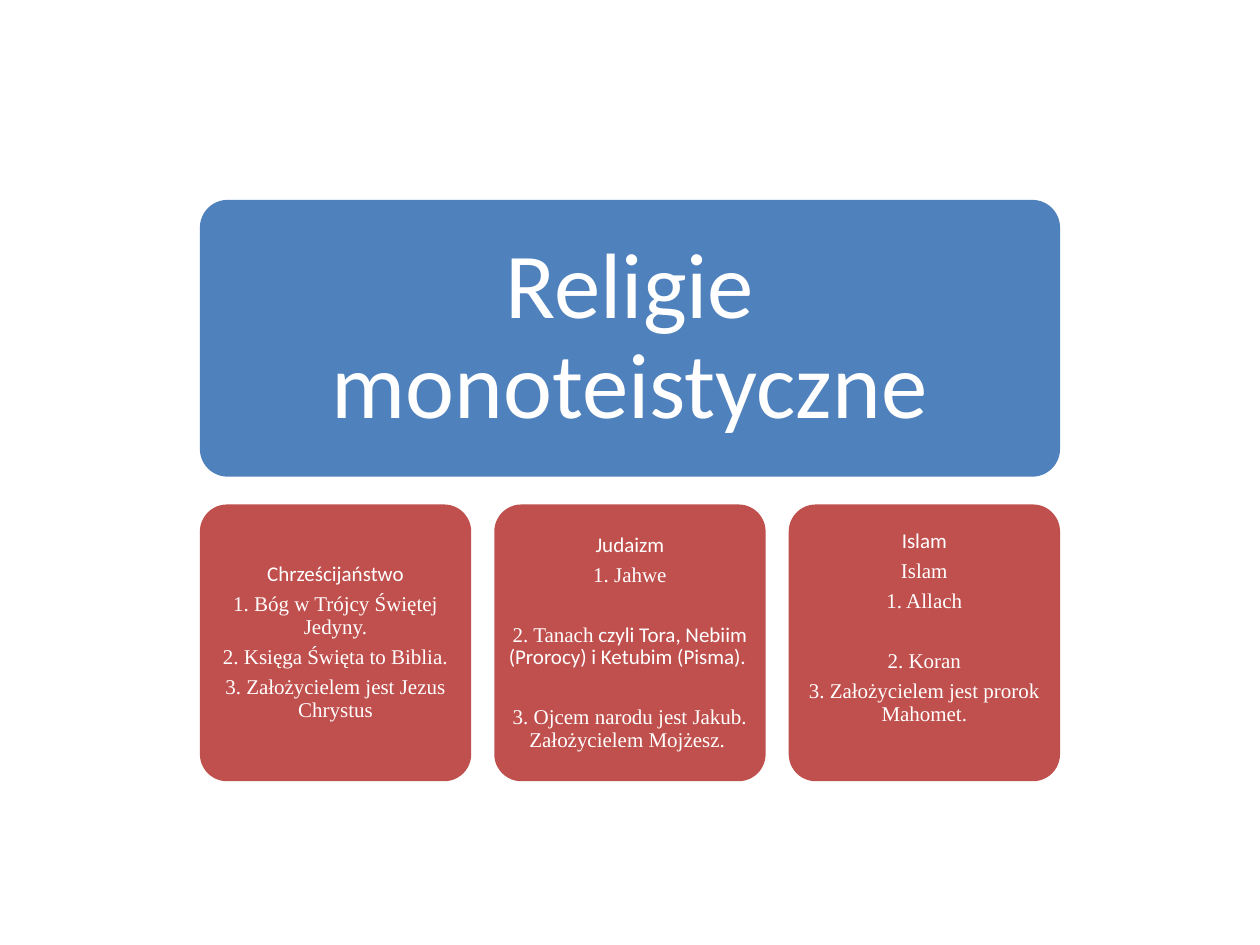
from pptx import Presentation
from pptx.dml.color import RGBColor
from pptx.enum.shapes import MSO_SHAPE
from pptx.enum.text import MSO_ANCHOR, MSO_AUTO_SIZE, PP_ALIGN
from pptx.util import Cm, Pt

ROUNDED = MSO_SHAPE.ROUNDED_RECTANGLE
MIDDLE = MSO_ANCHOR.MIDDLE
CENTER = PP_ALIGN.CENTER
NO_AUTOFIT = MSO_AUTO_SIZE.NONE

COLORS = {"heading": "4F81BD", "religion": "C0504D", "text": "FFFFFF"}
SANS, SERIF = "Calibri", "Times New Roman"

SLIDE_WIDTH, SLIDE_HEIGHT = 25.4, 19.05
DIAGRAM_WIDTH = 17.34
LEFT = (SLIDE_WIDTH - DIAGRAM_WIDTH) / 2
HEADING_TOP, RELIGIONS_TOP = 4.03, 10.17
PANEL_HEIGHT = 5.58
COLUMN_WIDTH = 5.47
LINE_GAP = 17.1  # points taken by one skipped line

# Each religion: its paragraphs as (runs, skip a line before), and bottom inset in cm
RELIGIONS = [
    ([([("Chrześcijaństwo", SANS)], False),
      ([("1. Bóg w Trójcy Świętej Jedyny.", SERIF)], False),
      ([("2. Księga Święta to Biblia.", SERIF)], False),
      ([("3. Założycielem jest Jezus Chrystus", SERIF)], False)], 0),
    ([([("Judaizm", SANS)], False),
      ([("1. Jahwe", SERIF)], False),
      ([("2. Tanach", SERIF),
        (" czyli Tora, Nebiim (Prorocy) i Ketubim (Pisma). ", SANS)], True),
      ([("3. Ojcem narodu jest Jakub. Założycielem Mojżesz. ", SERIF)], True)], 0),
    ([([("Islam", SANS)], False),
      ([("Islam", SERIF)], False),
      ([("1. Allach", SERIF)], False),
      ([("2. Koran", SERIF)], True),
      ([("3. Założycielem jest prorok Mahomet.", SERIF)], False)], 0.6),
]


def apply(target, values):
    for name, value in values.items():
        setattr(target, name, value)


class DiagramSlide:
    def __init__(self, presentation):
        self.slide = presentation.slides.add_slide(presentation.slide_layouts[5])

    def panel(self, left, top, width, color):
        panel = self.slide.shapes.add_shape(
            ROUNDED, Cm(left), Cm(top), Cm(width), Cm(PANEL_HEIGHT))
        panel.adjustments[0] = 0.1
        panel.shadow.inherit = False
        panel.fill.solid()
        panel.fill.fore_color.rgb = RGBColor.from_string(COLORS[color])
        panel.line.fill.background()
        return panel

    def fill_text(self, frame, paragraphs, size, inset=0, bottom=0):
        apply(frame, {
            "word_wrap": True, "auto_size": NO_AUTOFIT, "vertical_anchor": MIDDLE,
            "margin_left": Cm(inset), "margin_right": Cm(inset),
            "margin_top": Cm(inset), "margin_bottom": Cm(inset + bottom)})
        for index, (runs, skip_line) in enumerate(paragraphs):
            paragraph = frame.add_paragraph() if index else frame.paragraphs[0]
            apply(paragraph, {
                "alignment": CENTER, "line_spacing": 0.9,
                "space_before": Pt(LINE_GAP if skip_line else 0),
                "space_after": Pt(0.35 * size)})
            for text, font in runs:
                run = paragraph.add_run()
                run.text = text
                apply(run.font, {"name": font, "size": Pt(size)})
                run.font.color.rgb = RGBColor.from_string(COLORS["text"])

    def heading(self, text):
        panel = self.panel(LEFT, HEADING_TOP, DIAGRAM_WIDTH, "heading")
        title = self.slide.shapes.title
        apply(title, {"left": panel.left, "top": panel.top,
                      "width": panel.width, "height": panel.height})
        panel.element.addnext(title.element)  # title goes in front of its panel
        self.fill_text(title.text_frame, [([(text, SANS)], False)], 53, inset=0.56)

    def religion(self, left, paragraphs, bottom):
        panel = self.panel(left, RELIGIONS_TOP, COLUMN_WIDTH, "religion")
        self.fill_text(panel.text_frame, paragraphs, 12, bottom=bottom)


def main():
    presentation = Presentation()
    presentation.slide_width = Cm(SLIDE_WIDTH)
    presentation.slide_height = Cm(SLIDE_HEIGHT)
    diagram = DiagramSlide(presentation)
    diagram.heading("Religie monoteistyczne")
    step = (DIAGRAM_WIDTH - COLUMN_WIDTH) / (len(RELIGIONS) - 1)
    for column, (paragraphs, bottom) in enumerate(RELIGIONS):
        diagram.religion(LEFT + column * step, paragraphs, bottom)
    presentation.save("out.pptx")


if __name__ == "__main__":
    main()
